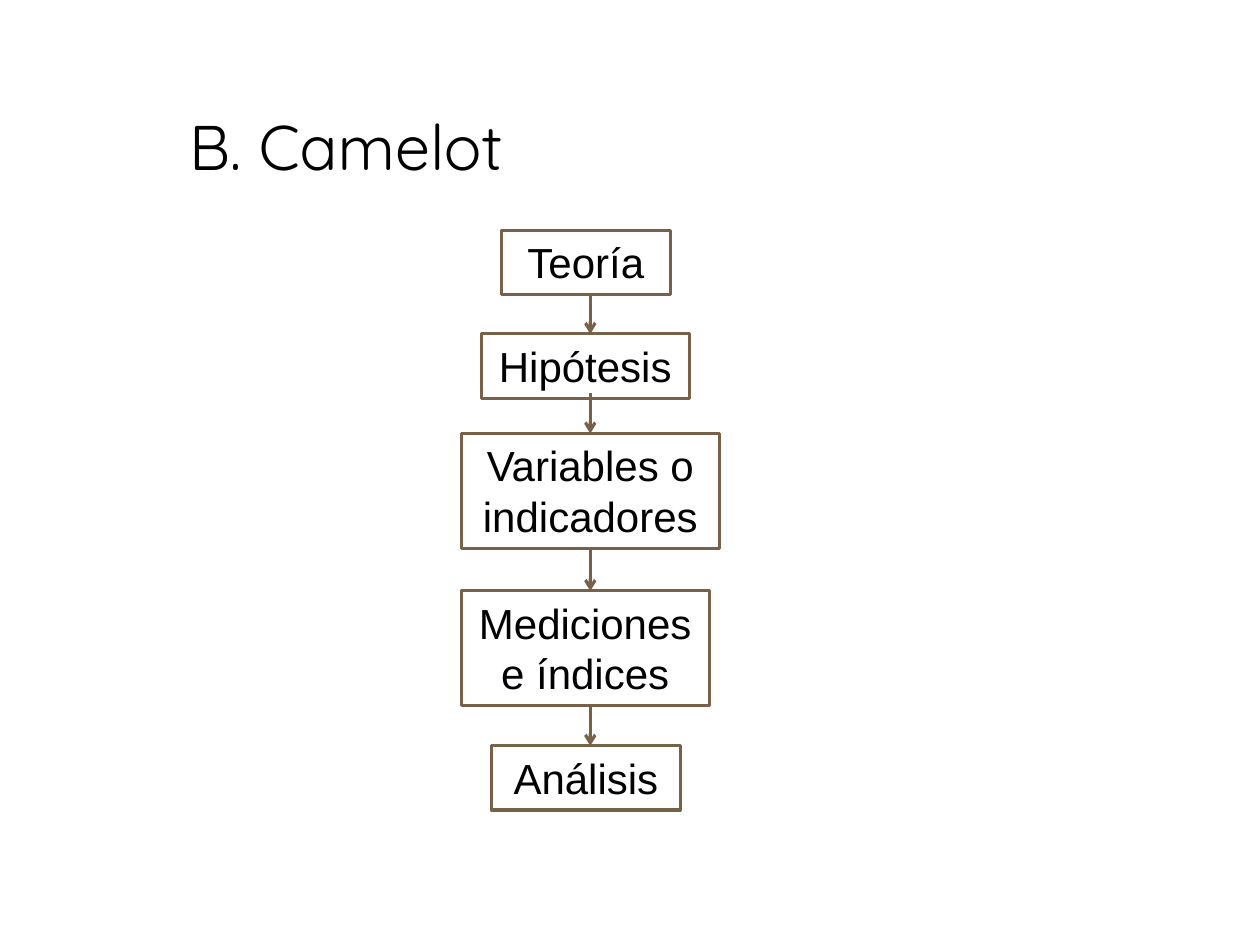
from lxml import etree
from pptx import Presentation
from pptx.dml.color import RGBColor
from pptx.enum.shapes import MSO_CONNECTOR, MSO_SHAPE
from pptx.enum.text import MSO_ANCHOR, MSO_AUTO_SIZE, PP_ALIGN
from pptx.oxml.ns import qn
from pptx.util import Pt

RECT = MSO_SHAPE.RECTANGLE
STRAIGHT = MSO_CONNECTOR.STRAIGHT
TOP, MIDDLE = MSO_ANCHOR.TOP, MSO_ANCHOR.MIDDLE
LEFT, CENTER = PP_ALIGN.LEFT, PP_ALIGN.CENTER
GROW = MSO_AUTO_SIZE.SHAPE_TO_FIT_TEXT
BLACK, BROWN = "000000", "776149"
BEGIN, END = 2, 0  # bottom and top sides

AXIS = 337.3  # x of every arrow
ONE, TWO = 36.7, 65.5  # heights of one-line and two-line steps
STEPS = [
    ("Teoría", (286.5, 131.8, 96.5, ONE)),
    ("Hipótesis", (275, 190.8, 118.8, ONE)),
    ("Variables o indicadores", (263.5, 247.7, 147.6, TWO)),
    ("Mediciones e índices", (263.5, 337.7, 141.8, TWO)),
    ("Análisis", (280.8, 426.2, 108, ONE)),
]
STARTS = [167.8, 224.6, 313.2, 403.9]


def color(code):
    return RGBColor.from_string(code)


def style(frame, font, size, align, anchor):
    frame.word_wrap = True
    frame.vertical_anchor = anchor
    par = frame.paragraphs[0]
    par.alignment = align
    par.font.name, par.font.size = font, Pt(size)
    par.font.color.rgb = color(BLACK)


def edge(line):
    line.color.rgb = color(BROWN)
    line.width = Pt(1.75)


def add_title(slide, text, box):
    title = slide.shapes.title
    title.left, title.top, title.width, title.height = map(Pt, box)
    title.text_frame.text = text
    style(title.text_frame, "Quicksand", 36, LEFT, MIDDLE)


def add_step(slide, text, box):
    step = slide.shapes.add_shape(RECT, *map(Pt, box))
    step.shadow.inherit = False
    step.fill.background()
    edge(step.line)
    step.text_frame.text = text
    style(step.text_frame, "Arial", 24, CENTER, TOP)
    step.text_frame.auto_size = GROW
    return step


def add_arrow(slide, start, end):
    arrow = slide.shapes.add_connector(
        STRAIGHT, Pt(AXIS), Pt(start), Pt(AXIS), Pt(end))
    edge(arrow.line)
    tail = etree.SubElement(arrow.line._get_or_add_ln(), qn("a:tailEnd"))
    tail.set("type", "arrow")
    etree.SubElement(arrow._element.spPr, qn("a:effectLst"))
    return arrow


def on_axis(box):
    return abs(box[0] + box[2] / 2 - AXIS) < 0.1


def add_flow(slide, steps, starts):
    shapes = [add_step(slide, text, box) for text, box in steps]
    boxes = [box for _, box in steps]
    for i, start in enumerate(starts):
        arrow = add_arrow(slide, start, boxes[i + 1][1])
        if on_axis(boxes[i]):
            arrow.begin_connect(shapes[i], BEGIN)
        if on_axis(boxes[i + 1]):
            arrow.end_connect(shapes[i + 1], END)


def main():
    deck = Presentation()
    deck.slide_width, deck.slide_height = Pt(720), Pt(540)
    slide = deck.slides.add_slide(deck.slide_layouts[5])
    add_title(slide, "B. Camelot", (100.8, 54, 558, 57.6))
    add_flow(slide, STEPS, STARTS)
    deck.save("out.pptx")


if __name__ == "__main__":
    main()
